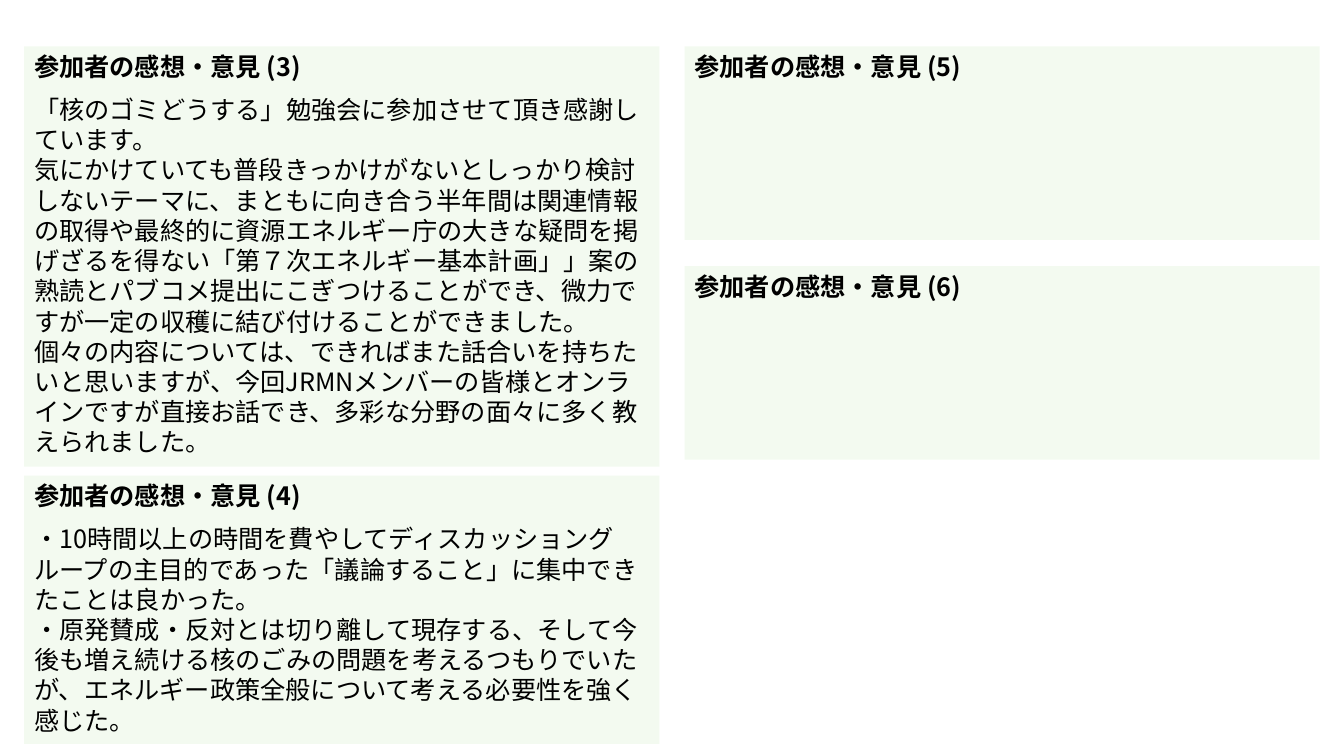
from lxml import etree
from pptx import Presentation
from pptx.dml.color import RGBColor
from pptx.enum.shapes import MSO_SHAPE
from pptx.enum.text import MSO_ANCHOR, PP_ALIGN
from pptx.oxml.ns import qn
from pptx.util import Inches, Pt

RECTANGLE = MSO_SHAPE.RECTANGLE
TOP = MSO_ANCHOR.TOP
LEFT = PP_ALIGN.LEFT
COLORS = {"panel": "D9F2D0", "text": "000000"}
FONT = "Noto Sans CJK JP"
PANEL_OPACITY = 31
PANEL_WIDTH = 6.3
COLUMNS = {"left": 0.24, "right": 6.79}

presentation = Presentation()
presentation.slide_width = Inches(13.33)
presentation.slide_height = Inches(7.5)
slide = presentation.slides.add_slide(presentation.slide_layouts[6])


def write_paragraph(paragraph, text, bold=False, space_after=0):
    paragraph.alignment = LEFT
    paragraph.line_spacing = Pt(21.6)
    paragraph.space_after = Pt(space_after)
    run = paragraph.add_run()
    run.text = text
    run.font.size = Pt(18)
    run.font.bold = bold
    run.font.name = FONT
    run.font.color.rgb = RGBColor.from_string(COLORS["text"])
    east_asian = etree.SubElement(run.font._element, qn("a:ea"))
    east_asian.set("typeface", FONT)


opinions = [
    (3, "left", 0.46, 4.17, [
        "「核のゴミどうする」勉強会に参加させて頂き感謝しています。",
        "気にかけていても普段きっかけがないとしっかり検討しないテーマに、まともに向き合う半年間は"
        "関連情報の取得や最終的に資源エネルギー庁の大きな疑問を掲げざるを得ない"
        "「第７次エネルギー基本計画」」案の熟読とパブコメ提出にこぎつけることができ、"
        "微力ですが一定の収穫に結び付けることができました。",
        "個々の内容については、できればまた話合いを持ちたいと思いますが、"
        "今回JRMNメンバーの皆様とオンラインですが直接お話でき、"
        "多彩な分野の面々に多く教えられました。",
    ]),
    (4, "left", 4.72, 2.66, [
        "・10時間以上の時間を費やしてディスカッショングループの主目的であった"
        "「議論すること」に集中できたことは良かった。",
        "・原発賛成・反対とは切り離して現存する、そして今後も増え続ける核のごみの問題を"
        "考えるつもりでいたが、エネルギー政策全般について考える必要性を強く感じた。",
    ]),
    (5, "right", 0.46, 1.92, []),
    (6, "right", 2.64, 1.92, []),
]

for number, column, top, height, comments in opinions:
    panel = slide.shapes.add_shape(
        RECTANGLE, Inches(COLUMNS[column]), Inches(top), Inches(PANEL_WIDTH), Inches(height)
    )
    panel.name = f"Opinion {number}"
    panel.shadow.inherit = False
    panel.line.fill.background()
    panel.fill.solid()
    panel.fill.fore_color.rgb = RGBColor.from_string(COLORS["panel"])
    panel_color = panel._element.spPr.find(qn("a:solidFill"))[0]
    etree.SubElement(panel_color, qn("a:alpha")).set("val", str(PANEL_OPACITY * 1000))

    text_frame = panel.text_frame
    text_frame.word_wrap = True
    text_frame.vertical_anchor = TOP
    write_paragraph(
        text_frame.paragraphs[0], f"参加者の感想・意見 ({number})", bold=True, space_after=9
    )
    for comment in comments:
        write_paragraph(text_frame.add_paragraph(), comment)

presentation.save("out.pptx")
